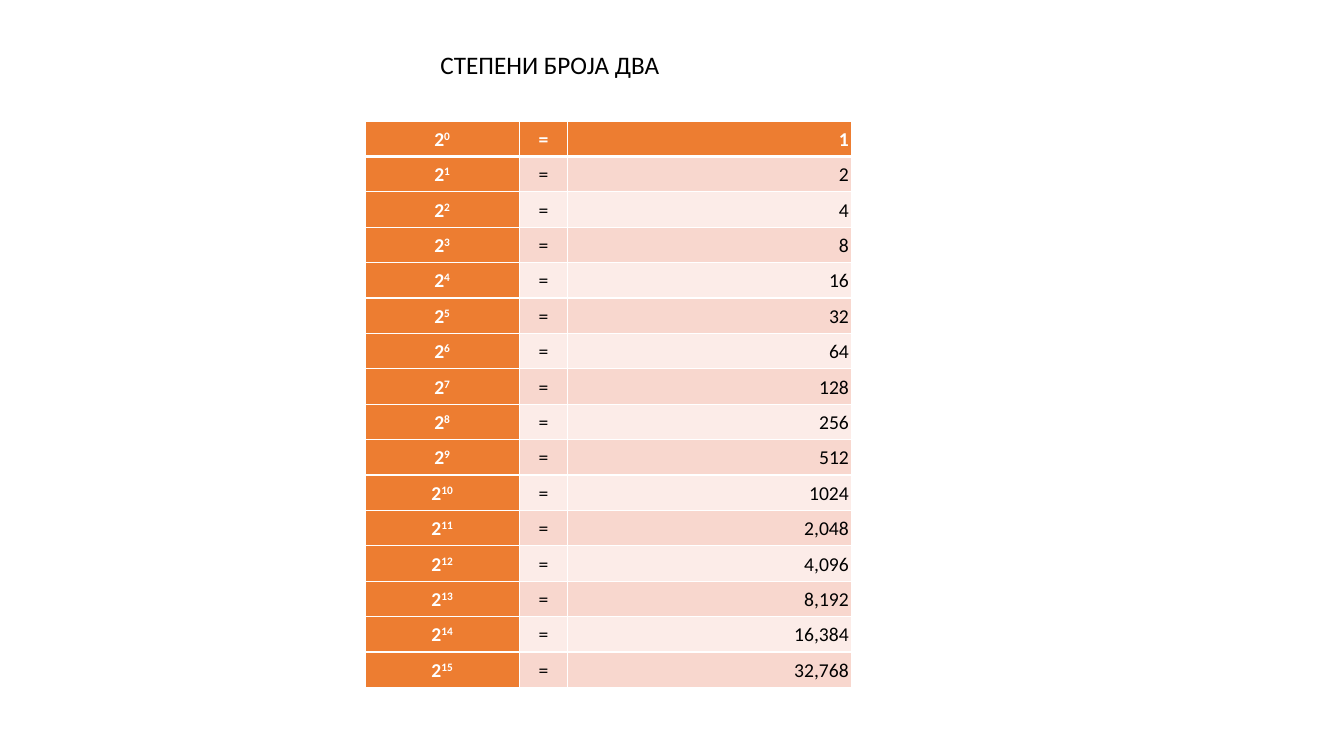
from lxml import etree
from pptx import Presentation
from pptx.dml.color import RGBColor
from pptx.enum.text import MSO_ANCHOR, MSO_AUTO_SIZE, PP_ALIGN
from pptx.oxml.ns import qn
from pptx.util import Inches, Pt

LEFT, CENTER, RIGHT = PP_ALIGN.LEFT, PP_ALIGN.CENTER, PP_ALIGN.RIGHT
MIDDLE = MSO_ANCHOR.MIDDLE

# Content: the position of each value is its exponent
TITLE = "СТЕПЕНИ БРОЈА ДВА"
BASE, EQUALS = "2", "="
VALUES = ["1", "2", "4", "8", "16", "32", "64", "128", "256", "512", "1024",
          "2,048", "4,096", "8,192", "16,384", "32,768"]

# Look
FONT = "Calibri"
WHITE, BLACK, ORANGE = "FFFFFF", "000000", "ED7D31"
BANDS = ["FCECE8", "F8D7CE"]  # even rows, odd rows
THIN, THICK = 1, 3

# Layout in inches
SLIDE_W, SLIDE_H = 13.33, 7.5
TITLE_BOX = (4.27, 0.44, 2.39, 0.4)
TABLE_LEFT, TABLE_TOP, TABLE_H = 3.62, 1.2, 5.62
COLUMNS = [1.53, 0.48, 2.82]
CELL_MARGIN = 0.03


def color(hex_value):
    return RGBColor.from_string(hex_value)


def write(frame, text, *, size=14, ink=BLACK, bold=False, align=LEFT,
          spacing=None, superscript=""):
    paragraph = frame.paragraphs[0]
    paragraph.alignment = align
    if spacing:
        paragraph.line_spacing = spacing
    for part in filter(None, (text, superscript)):
        run = paragraph.add_run()
        run.text = part
        run.font.name, run.font.size, run.font.bold = FONT, Pt(size), bold
        run.font.color.rgb = color(ink)
    if superscript:
        run.font._element.set("baseline", "30000")


def add_borders(cell, top, bottom):
    properties = cell._tc.get_or_add_tcPr()
    for side, width in (("L", THIN), ("R", THIN), ("T", top), ("B", bottom)):
        line = etree.SubElement(properties, qn(f"a:ln{side}"), w=str(Pt(width)))
        fill = etree.SubElement(line, qn("a:solidFill"))
        etree.SubElement(fill, qn("a:srgbClr"), val=WHITE)


def add_powers_table(slide):
    powers = slide.shapes.add_table(
        len(VALUES), len(COLUMNS), Inches(TABLE_LEFT), Inches(TABLE_TOP),
        Inches(sum(COLUMNS)), Inches(TABLE_H)).table
    for column, width in zip(powers.columns, COLUMNS):
        column.width = Inches(width)

    for exponent, value in enumerate(VALUES):
        powers.rows[exponent].height = Inches(TABLE_H / len(VALUES))
        top = THICK if exponent == 1 else THIN
        bottom = THICK if exponent == 0 else THIN
        entries = [(BASE, str(exponent), CENTER), (EQUALS, "", CENTER),
                   (value, "", RIGHT)]
        for col, (text, superscript, align) in enumerate(entries):
            cell = powers.cell(exponent, col)
            accent = exponent == 0 or col == 0
            add_borders(cell, top, bottom)
            cell.fill.solid()
            cell.fill.fore_color.rgb = color(
                ORANGE if accent else BANDS[exponent % 2])
            cell.vertical_anchor = MIDDLE
            cell.margin_left = cell.margin_right = Inches(CELL_MARGIN)
            cell.margin_top = cell.margin_bottom = Inches(CELL_MARGIN)
            write(cell.text_frame, text, superscript=superscript, align=align,
                  ink=WHITE if accent else BLACK, bold=accent, spacing=1.07)


def main():
    deck = Presentation()
    deck.slide_width, deck.slide_height = Inches(SLIDE_W), Inches(SLIDE_H)
    slide = deck.slides.add_slide(deck.slide_layouts[6])

    # Powers of two
    add_powers_table(slide)

    # Title
    title = slide.shapes.add_textbox(*map(Inches, TITLE_BOX)).text_frame
    title.word_wrap = False
    title.auto_size = MSO_AUTO_SIZE.SHAPE_TO_FIT_TEXT
    write(title, TITLE, size=18)

    deck.save("out.pptx")


if __name__ == "__main__":
    main()
